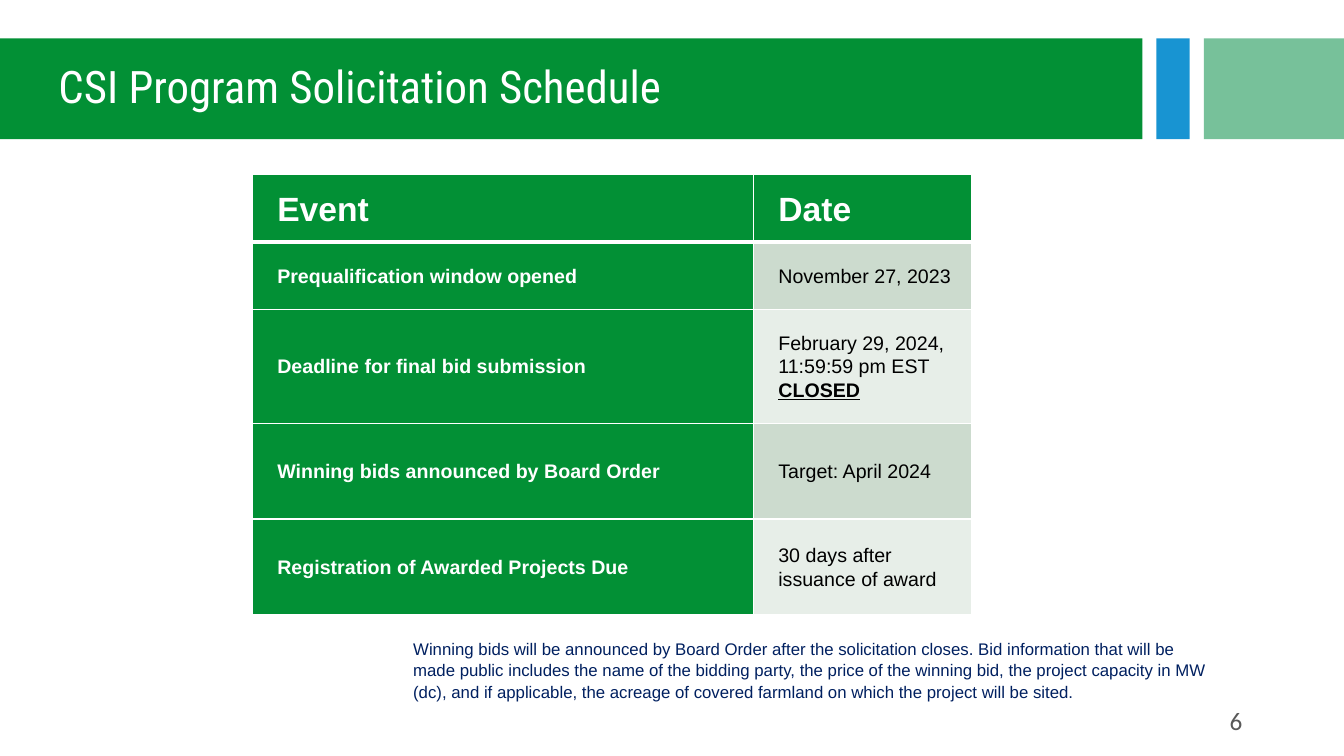
"""Build the CSI Program Solicitation Schedule slide."""
from lxml.etree import SubElement
from pptx import Presentation
from pptx.dml.color import RGBColor
from pptx.enum.shapes import MSO_SHAPE as Shape
from pptx.enum.text import MSO_ANCHOR as Anchor, MSO_AUTO_SIZE as AutoSize, PP_ALIGN as Align
from pptx.oxml.ns import qn
from pptx.util import Inches, Pt

COLORS = {
    "green": "029035", "blue": "1894D2", "mint": "77C19A", "white": "FFFFFF",
    "black": "000000", "gray": "595959", "navy": "002060",
    "band_dark": "CCDBCE", "band_light": "E7EEE8",
}


def style_text(paragraph, size, color, font_name="Arial", bold=False):
    for run in paragraph.runs:
        run.font.size = Pt(size)
        run.font.name = font_name
        run.font.bold = bold
        run.font.color.rgb = RGBColor.from_string(COLORS[color])


def add_border(cell, side, width):
    line = SubElement(cell._tc.get_or_add_tcPr(), qn(f"a:ln{side}"), w=str(Pt(width)))
    fill = SubElement(line, qn("a:solidFill"))
    SubElement(fill, qn("a:srgbClr"), val=COLORS["white"])


presentation = Presentation()
presentation.slide_width = Inches(13.33)
presentation.slide_height = Inches(7.5)
slide = presentation.slides.add_slide(presentation.slide_layouts[5])

for left, width, color in [(11.47, 0.33, "blue"), (11.94, 1.39, "mint"), (-0.02, 11.35, "green")]:
    banner = slide.shapes.add_shape(Shape.RECTANGLE, Inches(left), Inches(0.38), Inches(width), Inches(1))
    banner.shadow.inherit = False
    banner.fill.solid()
    banner.fill.fore_color.rgb = RGBColor.from_string(COLORS[color])
    banner.line.fill.background()

title = slide.shapes.title
slide.shapes.element.append(title.element)
title.left, title.top, title.width, title.height = banner.left, banner.top, banner.width, banner.height
title.text_frame.text = "CSI Program Solicitation Schedule"
title.text_frame.auto_size = AutoSize.NONE
title.text_frame.vertical_anchor = Anchor.MIDDLE
paragraph = title.text_frame.paragraphs[0]
paragraph.alignment = Align.LEFT
paragraph.line_spacing = 0.9
paragraph._p.get_or_add_pPr().set("marL", str(Inches(0.5)))
style_text(paragraph, 32, "white", "Roboto Condensed")

schedule = [
    ("Event", "Date"),
    ("Prequalification window opened", "November 27, 2023"),
    ("Deadline for final bid submission", "February 29, 2024, 11:59:59 pm EST "),
    ("Winning bids announced by Board Order", "Target: April 2024"),
    ("Registration of Awarded Projects Due", "30 days after issuance of award"),
]
table = slide.shapes.add_table(5, 2, Inches(2.5), Inches(1.73), Inches(7.14), Inches(4.37)).table
for column, width in zip(table.columns, (4.97, 2.17)):
    column.width = Inches(width)
for row, height in zip(table.rows, (0.67, 0.67, 1.13, 0.95, 0.95)):
    row.height = Inches(height)

for row_index, texts in enumerate(schedule):
    for column_index, text in enumerate(texts):
        cell = table.cell(row_index, column_index)
        is_header = row_index == 0
        is_green = is_header or column_index == 0
        cell.margin_left = cell.margin_right = cell.margin_top = cell.margin_bottom = 0
        cell.vertical_anchor = Anchor.MIDDLE
        for side in "LRTB":
            is_header_rule = (row_index, side) in [(0, "B"), (1, "T")]
            add_border(cell, side, 3 if is_header_rule else 1)
        band = "band_dark" if row_index % 2 else "band_light"
        cell.fill.solid()
        cell.fill.fore_color.rgb = RGBColor.from_string(COLORS["green" if is_green else band])
        cell.text_frame.text = text
        paragraph = cell.text_frame.paragraphs[0]
        paragraph.line_spacing = 1.07
        paragraph.space_after = Pt(8)
        paragraph._p.get_or_add_pPr().set("marL", str(Inches(0.25)))
        style_text(paragraph, 24 if is_header else 14, "white" if is_green else "black", bold=is_green)

deadline = table.cell(2, 1).text_frame.paragraphs[0]
closed = deadline.add_run()
closed.text = "CLOSED"
style_text(deadline, 14, "black")
closed.font.bold = True
closed.font.underline = True

note = slide.shapes.add_textbox(Inches(4), Inches(6.27), Inches(8.07), Inches(1.08))
note.text_frame.word_wrap = True
note.text_frame.text = (
    "Winning bids will be announced by Board Order after the solicitation closes. "
    "Bid information that will be made public includes the name of the bidding party, "
    "the price of the winning bid, the project capacity in MW (dc), and if applicable, "
    "the acreage of covered farmland on which the project will be sited."
)
paragraph = note.text_frame.paragraphs[0]
paragraph.line_spacing = 1.07
paragraph.space_after = Pt(8)
style_text(paragraph, 12, "navy")

page_number = slide.shapes.add_textbox(Inches(9.42), Inches(6.95), Inches(3), Inches(0.4))
page_number.text_frame.word_wrap = True
page_number.text_frame.vertical_anchor = Anchor.MIDDLE
page_number.text_frame.text = "6"
paragraph = page_number.text_frame.paragraphs[0]
paragraph.alignment = Align.RIGHT
style_text(paragraph, 18, "gray", "Calibri")

presentation.save("out.pptx")
